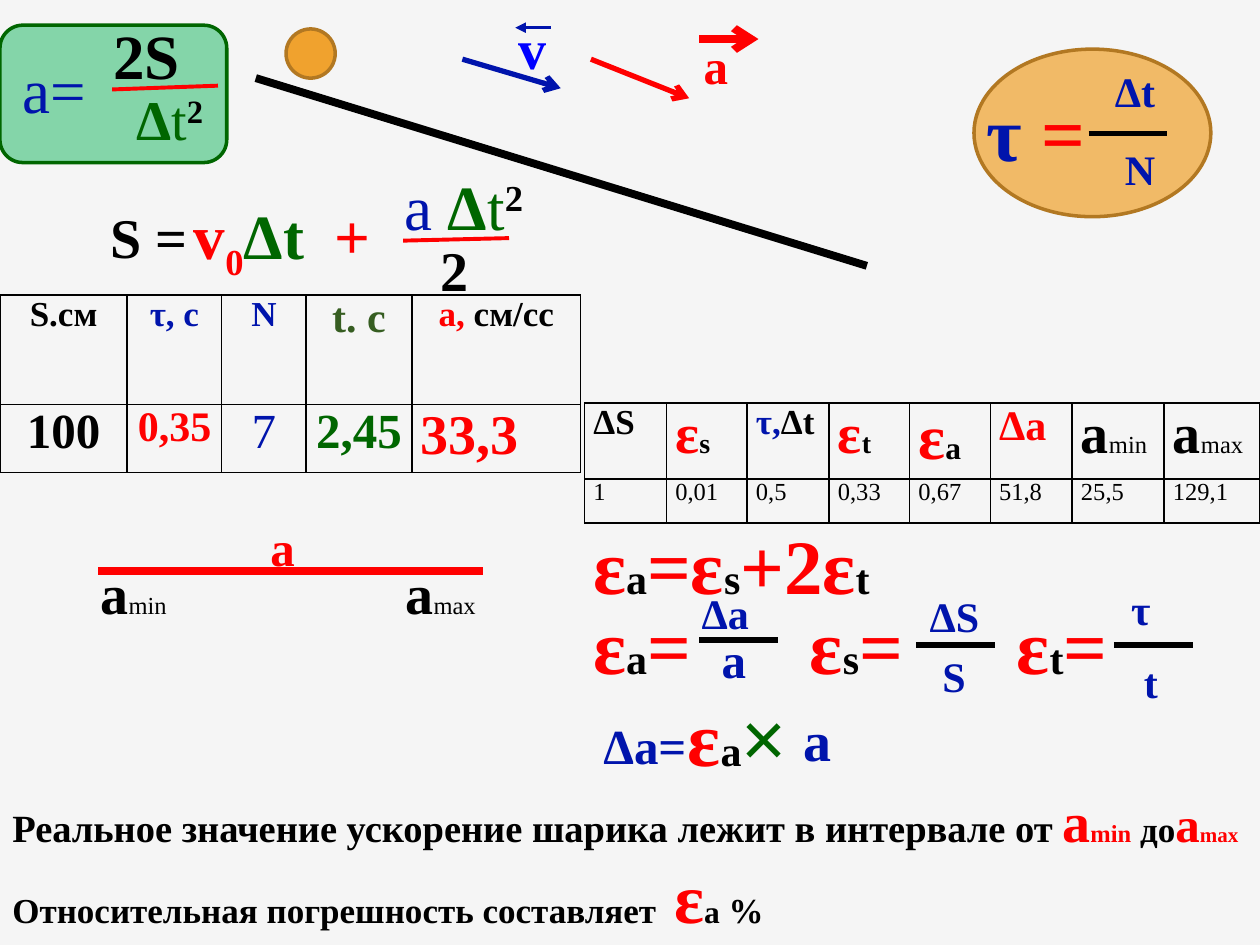
import pptx
import pptx.util
import pptx.dml.color
import pptx.enum.shapes
import pptx.enum.text
import pptx.oxml
import pptx.oxml.ns

HUES = {
    "back": "F5F5F5", "black": "000000", "red": "FF0000", "blue": "0014AC",
    "pure": "0000FF", "green": "006600", "moss": "365D21", "mint": "00B050",
    "gold": "F0A22E", "brown": "B27822",
}
NS = 'xmlns:a="http://schemas.openxmlformats.org/drawingml/2006/main"'
RGB = pptx.dml.color.RGBColor.from_string
Pt = pptx.util.Pt
KIND = pptx.enum.shapes.MSO_SHAPE

deck = pptx.Presentation()
deck.slide_width = pptx.util.Inches(10)
deck.slide_height = pptx.util.Inches(7.5)
slide = deck.slides.add_slide(deck.slide_layouts[6])
slide.background.fill.solid()
slide.background.fill.fore_color.rgb = RGB(HUES["back"])
UNIT = deck.slide_width // 100


def write(para, text, size=24, hue="black", bold=True, base=0, face="Times New Roman"):
    run = para.add_run()
    run.text = text
    run.font.size = Pt(size)
    run.font.name = face
    run.font.bold = bold
    run.font.color.rgb = RGB(HUES[hue])
    if base:
        run.font._element.set("baseline", str(base * 1000))


def rule(ends, hue="black", wide=3, head=None):
    line = slide.shapes.add_connector(
        pptx.enum.shapes.MSO_CONNECTOR.STRAIGHT, *[int(e * UNIT) for e in ends])
    line.line.color.rgb = RGB(HUES[hue])
    line.line.width = Pt(wide)
    if head:
        line.line._get_or_add_ln().append(
            pptx.oxml.parse_xml(f'<a:tailEnd {NS} type="{head}"/>'))
    line._element.spPr.append(pptx.oxml.parse_xml(f"<a:effectLst {NS}/>"))


shapes = [
    (KIND.ROUNDED_RECTANGLE, (0, 2, 18, 10.9), "mint", 46, "green"),
    (KIND.OVAL, (77.3, 3.9, 18.8, 13.3), "gold", 71, "brown"),
    (KIND.OVAL, (22.7, 2.3, 3.9, 3.9), "gold", 100, "brown"),
]
for kind, place, hue, share, edge in shapes:
    shape = slide.shapes.add_shape(kind, *[int(p * UNIT) for p in place])
    shape.shadow.inherit = False
    shape.fill.solid()
    shape.fill.fore_color.rgb = RGB(HUES[hue])
    if share < 100:
        tint = shape._element.spPr.find(".//" + pptx.oxml.ns.qn("a:srgbClr"))
        tint.append(pptx.oxml.parse_xml(f'<a:alpha {NS} val="{share * 1000}"/>'))
    shape.line.color.rgb = RGB(HUES[edge])
    shape.line.width = Pt(2)

rule((20.3, 6.2, 68.8, 21.1), wide=4.5)
rule((46.9, 4.7, 54.7, 7.8), "red", 3, "arrow")
rule((36.7, 4.7, 44.5, 7), "blue", 3, "arrow")
rule((43.7, 2.2, 40.9, 2.2), "blue", 2, "triangle")
rule((55.5, 3.1, 60.2, 3.1), "red", 4.5, "arrow")
rule((7.8, 45.3, 38.3, 45.3), "red", 4.5)
rule((32, 19.1, 40.4, 18.9), "red", 2.25)
rule((8.9, 7.1, 17.3, 6.8), "red", 2.25)
for left, top in [(55.5, 50.8), (72.7, 51.2), (88.4, 51.2), (86.4, 10.6)]:
    rule((left, top, left + 6.25, top))

texts = [
    ((0.8, 3.5, 7.8, 8.3), [("a=", 36, "blue", False)]),
    ((8, 0.8, 13.8, 8.3), [("2S", 36)]),
    ((8.7, 6.2, 14.7, 7.1), [(" ", 32), ("Δ", 32, "green"), ("t", 32, "green", False),
                             ("2", 32, "black", True, 30)]),
    ((7.8, 15.6, 10.2, 6.4), [("S =", 32)]),
    ((14.4, 15.1, 12, 6.8), [("v", 36, "red"), ("0", 36, "red", True, -25),
                             ("Δt", 36, "green")]),
    ((25.6, 15.1, 6, 6.8), [("+", 36, "red")]),
    ((31.1, 12.8, 13.8, 8.3), [("a", 36, "blue", False), (" Δ", 36, "green"),
                               ("t", 36, "green", False), ("2", 36, "black", True, 30)]),
    ((34, 18.2, 12.5, 7.1), [("2", 32)]),
    ((40.2, 0.6, 4.4, 6.4), [("v", 32, "pure")]),
    ((53.9, 2.3, 7, 5.7), [(" а", 28, "red")]),
    ((77.3, 6.2, 11.7, 8.4), [("τ ", 44, "blue"), ("=", 44, "red")]),
    ((87.5, 4.7, 6.3, 5), [("Δt", 24, "blue")]),
    ((88.3, 10.9, 5.5, 5), [("N", 24, "blue")]),
    ((19.5, 40.6, 7, 5.7), [(" а", 28, "red")]),
    ((7, 43.8, 7.3, 6.4), [("a", 32), ("min", 14, "black", False)]),
    ((31.2, 43.8, 7.6, 6.4), [("a", 32), ("max", 14, "black", False)]),
    ((46.1, 40.6, 25.8, 8.4), [("ε", 44, "red"), ("a",), ("=ε", 44, "red"), ("s",),
                               ("+2ε", 44, "red"), ("t",)]),
    ((54.7, 46.1, 7.8, 5), [("Δa", 24, "blue")]),
    ((56.3, 49.5, 6.3, 5.7), [("a", 28, "blue")]),
    ((72.8, 46.4, 7.8, 5), [("ΔS", 24, "blue")]),
    ((73.8, 51.1, 7.8, 5), [("S", 24, "blue")]),
    ((88.8, 45.8, 6.3, 5), [("τ", 24, "blue")]),
    ((89.8, 51.6, 5.5, 5), [("t", 24, "blue")]),
    ((46.9, 56.3, 10.9, 5.7), [("Δa=", 28, "blue")]),
    ((53.6, 54.2, 10.2, 8.4), [("ε", 44, "red"), ("a",),
                               ("×", 44, "green", False, 0, "Arial")]),
    ((62.8, 55.5, 6.3, 6.4), [("a", 32, "blue")]),
    ((0, 61.9, 100, 13.1),
     [("Реальное значение ускорение шарика лежит в интервале от ", 22),
      ("a", 32, "red"), ("min", 14, "red"), (" ", 20, "red"), ("до", 20),
      ("a", 28, "red"), ("max", 12, "red")],
     [("Относительная погрешность составляет", 20), (" ε", 40, "red"),
      ("a", 18), (" %", 20)]),
]
for left, sub in [(46.1, "a"), (63.3, "s"), (79.7, "t")]:
    texts.append(((left, 46.9, 11.7, 8.4), [("ε", 44, "red"), (sub,), ("=", 44, "red")]))
for place, *paras in texts:
    frame = slide.shapes.add_textbox(*[int(p * UNIT) for p in place]).text_frame
    frame.word_wrap = True
    for num, runs in enumerate(paras):
        para = frame.add_paragraph() if num else frame.paragraphs[0]
        for run in runs:
            write(para, *run)

nums = ["1", "0,01", "0,5", "0,33", "0,67", "51,8", "25,5", "129,1"]
tables = [
    ((0, 23.4), [10.1, 7.5, 6.7, 8.4, 13.4], [8.7, 5.4], 5, [
        [[("S.см", 20)], [("τ, с", 20, "blue")], [("N", 20, "blue")],
         [("t. c", 24, "moss")], [("a, ", 20, "red"), ("cм/cc", 20)]],
        [[("100", 28)], [("0,35", 24, "red")], [("7", 28, "blue", False)],
         [("2,45", 28, "green")], [("33,3", 32, "red")]]]),
    ((46.4, 32), [6.5, 6.4, 6.5, 6.4, 6.4, 6.5, 7.3, 7.6], [5.7, 3.5], 0, [
        [[("ΔS", 20)], [("ε", 32, "red"), ("s", 16)],
         [("τ,", 20, "blue"), ("Δt", 20)], [("ε", 32, "red"), ("t", 16)],
         [("ε", 36, "red"), ("a", 18)], [("Δa", 24, "red")],
         [("a", 32), ("min", 14, "black", False)],
         [("a", 32), ("max", 14, "black", False)]],
        [[(num, 14, "black", False)] for num in nums]]),
]
for place, cols, rows, mids, cells in tables:
    size = [*place, sum(cols), sum(rows)]
    grid = slide.shapes.add_table(
        len(rows), len(cols), *[int(s * UNIT) for s in size]).table
    grid.first_row = grid.horz_banding = False
    for col, wide in zip(grid.columns, cols):
        col.width = int(wide * UNIT)
    for r, tall in enumerate(rows):
        grid.rows[r].height = int(tall * UNIT)
        for c, runs in enumerate(cells[r]):
            cell = grid.cell(r, c)
            cell.margin_left = cell.margin_right = int(0.7 * UNIT)
            cell.margin_top = cell.margin_bottom = 0
            para = cell.text_frame.paragraphs[0]
            if c < mids and (r, c) != (1, mids - 1):
                para.alignment = pptx.enum.text.PP_ALIGN.CENTER
            for run in runs:
                write(para, *run)
            props = cell._tc.get_or_add_tcPr()
            for side in "LRTB":
                props.append(pptx.oxml.parse_xml(
                    f'<a:ln{side} {NS} w="12700"><a:solidFill>'
                    f'<a:srgbClr val="{HUES["black"]}"/></a:solidFill></a:ln{side}>'))
            cell.fill.background()

deck.save("out.pptx")
